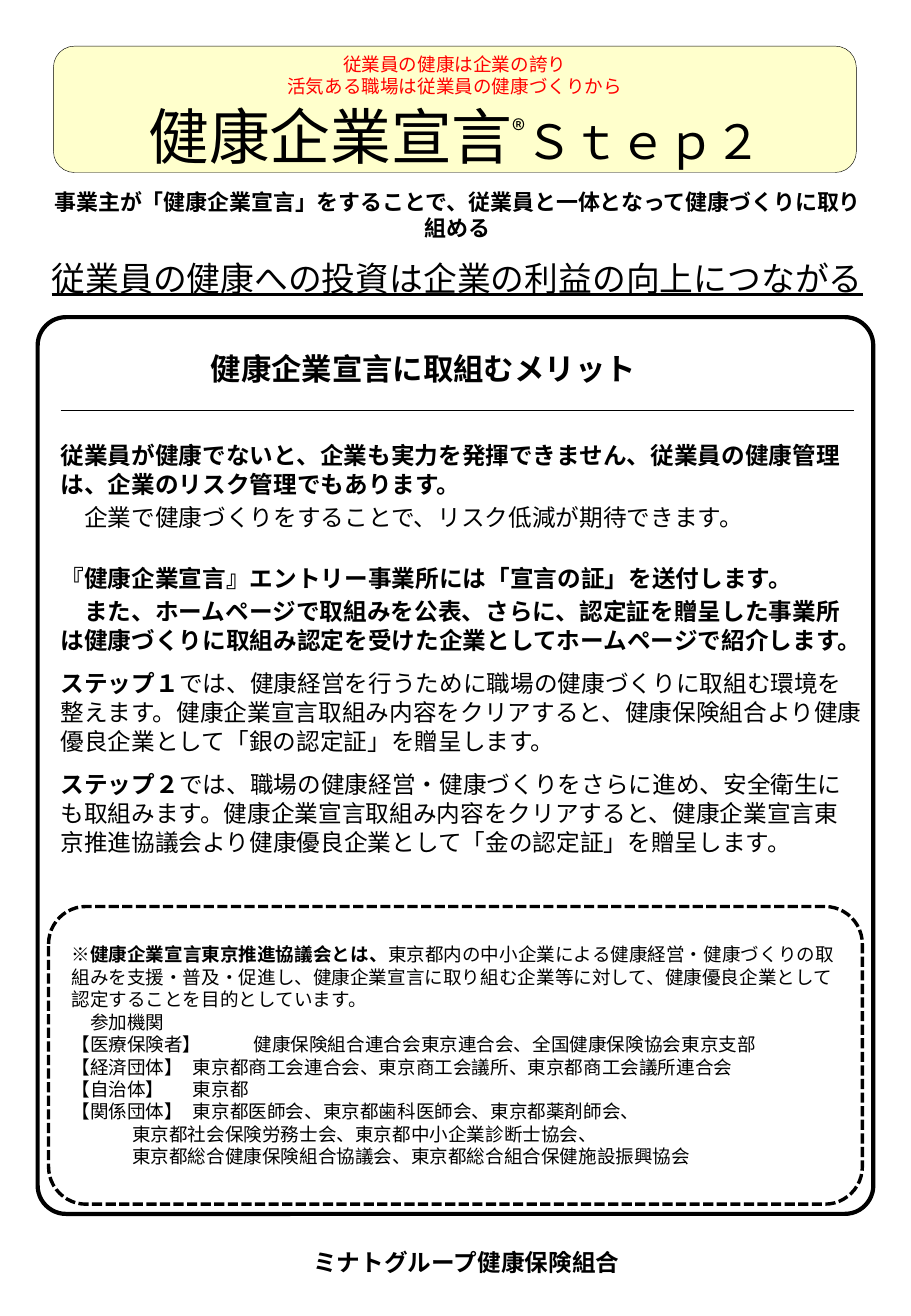
from lxml import etree
from pptx import Presentation
from pptx.dml.color import RGBColor
from pptx.enum.dml import MSO_LINE
from pptx.enum.shapes import MSO_CONNECTOR, MSO_SHAPE
from pptx.enum.text import MSO_ANCHOR, PP_ALIGN
from pptx.oxml.ns import qn
from pptx.util import Inches, Pt

RECT, ROUND = MSO_SHAPE.RECTANGLE, MSO_SHAPE.ROUNDED_RECTANGLE
TOP, MIDDLE, BOTTOM = MSO_ANCHOR.TOP, MSO_ANCHOR.MIDDLE, MSO_ANCHOR.BOTTOM
LEFT, CENTER = PP_ALIGN.LEFT, PP_ALIGN.CENTER
SYS_DASH = MSO_LINE.SQUARE_DOT
GOTHIC = "Noto Sans CJK JP"
BLACK, WHITE = "000000", "FFFFFF"

prs = Presentation()
prs.slide_width, prs.slide_height = Inches(7.5), Inches(10.83)
s = prs.slides.add_slide(prs.slide_layouts[6])


def add_box(kind, box, fill=None, line=None, width=1, adj=None):
    """Add a preset shape, or a text box when kind is None."""
    box = [Inches(v) for v in box]
    if kind is None:
        return s.shapes.add_textbox(*box)
    sp = s.shapes.add_shape(kind, *box)
    sp.shadow.inherit = False
    sp.fill.solid()
    sp.fill.fore_color.rgb = RGBColor.from_string(fill)
    if line:
        sp.line.color.rgb = RGBColor.from_string(line)
        sp.line.width = Pt(width)
    else:
        sp.line.fill.background()
    if adj is not None:
        sp.adjustments[0] = adj
    return sp


def write(sp, paragraphs, face=GOTHIC, color=BLACK, align=CENTER,
          anchor=MIDDLE, insets=(0, 0, 0, 0)):
    """Fill a shape; a paragraph is (size, line height, space before, runs),
    a run is (text, font settings)."""
    tf = sp.text_frame
    tf.word_wrap = True
    tf.vertical_anchor = anchor
    (tf.margin_left, tf.margin_top,
     tf.margin_right, tf.margin_bottom) = [Inches(v) for v in insets]
    for i, (size, height, before, runs) in enumerate(paragraphs):
        p = tf.paragraphs[0] if i == 0 else tf.add_paragraph()
        p.alignment = align
        if height:
            p.line_spacing = Pt(height)
        p.space_before = Pt(before)
        fonts = [p.font]
        for text, settings in runs:
            r = p.add_run()
            r.text = text
            target = p.font if len(runs) == 1 else r.font
            for key, value in settings.items():
                setattr(target, key, value)
            if len(runs) > 1:
                fonts.append(r.font)
        for font in fonts:
            font.size = font.size or Pt(size)
            font.name = face
            font.color.rgb = RGBColor.from_string(color)
        for rpr in list(p._p.iter(qn("a:defRPr"), qn("a:rPr"))):
            if rpr.find(qn("a:latin")) is not None:
                etree.SubElement(rpr, qn("a:ea"), typeface=face)


bold, plain = {"bold": True}, {"bold": False}

# Lead message
sp = add_box(RECT, (0.29, 1.56, 6.95, 0.87), WHITE, WHITE)
write(sp, [
    (13, 15.1, 0, [("事業主が「健康企業宣言」をすることで、従業員と一体となって健康づくりに取り組める", bold)]),
    (20, 24, 10, [("従業員の健康への投資は企業の利益の向上につながる", {"underline": True})]),
], face="Calibri", anchor=TOP, insets=(0.1, 0, 0.1, 0))

# Merit panel
add_box(ROUND, (0.31, 2.61, 6.88, 7.38), WHITE, BLACK, 2.5, 0.034)
sp = add_box(None, (0.5, 3.62, 6.6, 3.7))
merits = [
    (0, [("従業員が健康でないと、企業も実力を発揮できません、従業員の健康管理は、企業のリスク管理でもあります。", bold)]),
    (2.5, [("　企業で健康づくりをすることで、リスク低減が期待できます。", plain)]),
    (19, [("『健康企業宣言』エントリー事業所には「宣言の証」を送付します。", bold)]),
    (2.5, [("　また、ホームページで取組みを公表、さらに、認定証を贈呈した事業所は健康づくりに取組み認定を受けた企業としてホームページで紹介します。", bold)]),
    (7.8, [("ステップ１", bold),
           ("では、健康経営を行うために職場の健康づくりに取組む環境を整えます。健康企業宣言取組み内容をクリアすると、健康保険組合より健康優良企業として「銀の認定証」を贈呈します。", plain)]),
    (8.5, [("ステップ２", bold),
           ("では、職場の健康経営・健康づくりをさらに進め、安全衛生にも取組みます。健康企業宣言取組み内容をクリアすると、健康企業宣言東京推進協議会より健康優良企業として「金の認定証」を贈呈します。", plain)]),
]
write(sp, [(14, 17.2, before, runs) for before, runs in merits],
      align=LEFT, anchor=TOP)

# Panel heading and rule
sp = add_box(None, (0.4, 2.76, 6.69, 0.54))
write(sp, [(18, None, 0, [("健康企業宣言に取組むメリット", bold)])],
      insets=(0.1, 0.05, 0.62, 0.05))
rule = s.shapes.add_connector(MSO_CONNECTOR.STRAIGHT, Inches(0.5),
                              Inches(3.38), Inches(7.03), Inches(3.38))
rule.line.color.rgb = RGBColor.from_string(BLACK)
rule.line.width = Pt(0.75)
etree.SubElement(rule._element.spPr, qn("a:effectLst"))

# Title banner
sp = add_box(ROUND, (0.44, 0.38, 6.61, 1.04), "FFFFCC", BLACK, 0.25)
write(sp, [(36, 45, 0, [("健康企業宣言", {}),
                        ("®", {"size": Pt(28)}),
                        ("Ｓｔｅｐ２", {"size": Pt(28)})])],
      anchor=BOTTOM, insets=(0, 0, 0, -0.04))
sp.text_frame.paragraphs[0].runs[1]._r.rPr.set("baseline", "40000")
sp = add_box(None, (1.62, 0.38, 4.25, 0.47))
write(sp, [(11, 13, 0, [(text, {})]) for text in (
    "従業員の健康は企業の誇り", "活気ある職場は従業員の健康づくりから")],
    color="FF0000", anchor=TOP, insets=(0.1, 0.06, 0.1, 0))

# Issuer
sp = add_box(RECT, (2.3, 10.22, 3.08, 0.33), WHITE)
write(sp, [(14, None, 0, [("ミナトグループ健康保険組合", bold)])])

# Council note
sp = add_box(ROUND, (0.4, 7.46, 6.7, 2.45), WHITE, BLACK, 2, 0.126)
sp.line.dash_style = SYS_DASH
intro = [
    ("※", plain),
    ("健康企業宣言東京推進協議会とは、", bold),
    ("東京都内の中小企業による健康経営・健康づくりの取組みを支援・普及・促進し、健康企業宣言に取り組む企業等に対して、健康優良企業として認定することを目的としています。", plain),
]
members = [
    "　参加機関",
    "【医療保険者】\t健康保険組合連合会東京連合会、全国健康保険協会東京支部",
    "【経済団体】\t東京都商工会連合会、東京商工会議所、東京都商工会議所連合会",
    "【自治体】\t東京都",
    "【関係団体】\t東京都医師会、東京都歯科医師会、東京都薬剤師会、",
    "\t東京都社会保険労務士会、東京都中小企業診断士協会、",
    "\t東京都総合健康保険組合協議会、東京都総合組合保健施設振興協会",
]
write(sp, [(11, 13.3, 0, runs)
           for runs in [intro] + [[(text, plain)] for text in members]],
      face="Arial", align=LEFT, insets=(0.1, 0.05, 0.1, 0.05))

prs.save("out.pptx")
